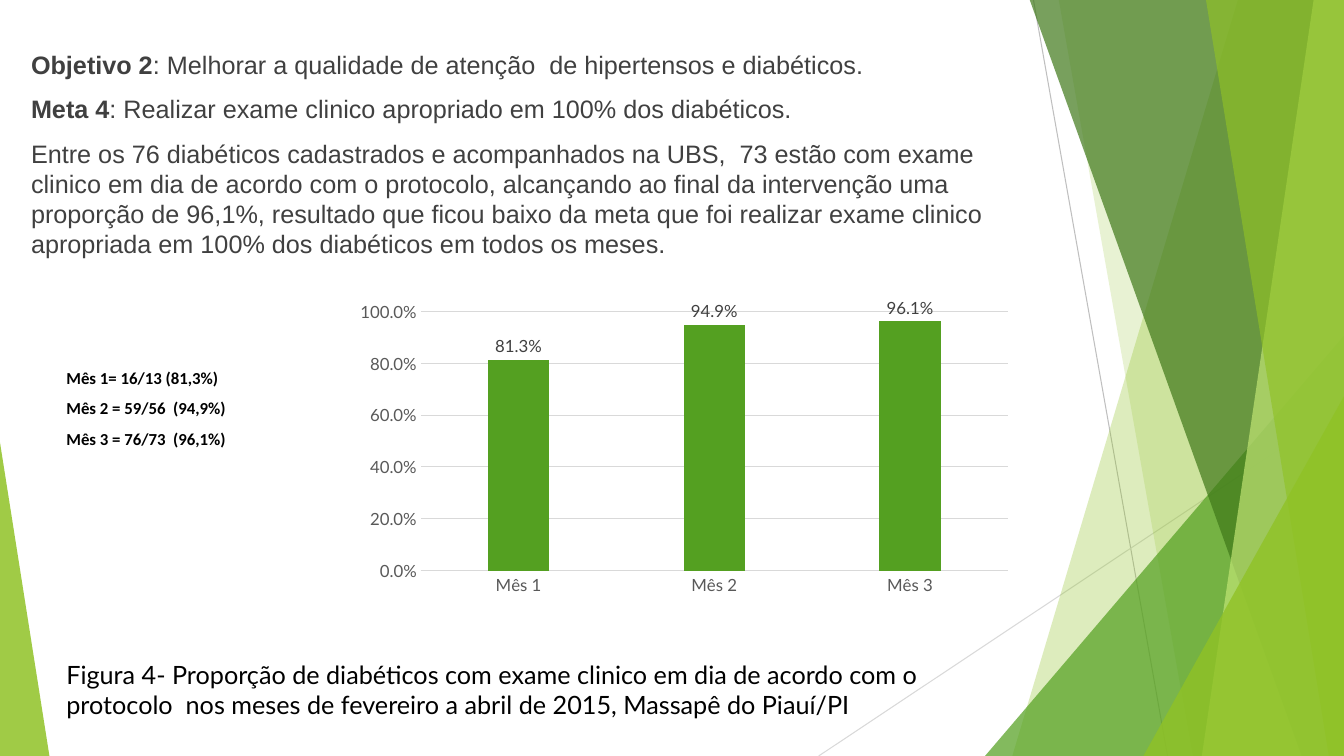
from lxml import etree
from pptx import Presentation
from pptx.chart.data import CategoryChartData
from pptx.dml.color import RGBColor
from pptx.enum.chart import XL_CHART_TYPE, XL_LABEL_POSITION, XL_TICK_MARK
from pptx.enum.shapes import MSO_CONNECTOR, MSO_SHAPE
from pptx.enum.text import MSO_ANCHOR
from pptx.oxml.ns import qn
from pptx.util import Inches, Pt


def paint(color_format, color, opacity=100):
    """Set a solid fill or line colour from a hex string."""
    color_format.solid()
    color_format.fore_color.rgb = RGBColor.from_string(color)
    if opacity < 100:
        hue = color_format._xPr.find(qn("a:solidFill"))[0]
        etree.SubElement(hue, qn("a:alpha")).set("val", str(opacity * 1000))


def add_text(left, top, width, height, paragraphs, *, size, font, color="000000",
             bold=False, before=0, spacing=1.0):
    """Each paragraph is a (bold lead, rest) pair."""
    box = page.shapes.add_textbox(Inches(left), Inches(top), Inches(width), Inches(height))
    frame = box.text_frame
    frame.word_wrap = True
    frame.vertical_anchor = MSO_ANCHOR.TOP
    for index, (lead, rest) in enumerate(paragraphs):
        para = frame.paragraphs[0] if index == 0 else frame.add_paragraph()
        para.space_before = Pt(before)
        para.line_spacing = spacing
        for text, heavy in ((lead, True), (rest, bold)):
            if text:
                span = para.add_run()
                span.text = text
                span.font.size = Pt(size)
                span.font.name = font
                span.font.bold = heavy
                span.font.color.rgb = RGBColor.from_string(color)


deck = Presentation()
deck.slide_width, deck.slide_height = Inches(13.33), Inches(7.5)
page = deck.slides.add_slide(deck.slide_layouts[6])

# Thin crossing lines
for x1, y1, x2, y2, color in ((10.25, 0, 11.58, 7.5, "BFBFBF"),
                              (13.33, 4.03, 8.12, 7.5, "D9D9D9")):
    line = page.shapes.add_connector(MSO_CONNECTOR.STRAIGHT, Inches(x1), Inches(y1),
                                     Inches(x2), Inches(y2))
    paint(line.line.fill, color)
    line.line.width = Pt(0.75)
    etree.SubElement(line._element.spPr, qn("a:effectLst"))

# Translucent facets: bands run to the right edge from a top x to a bottom x;
# triangles have a box and an apex position
facets = (
    ("band", (12.28, 10.04), "90C226", 30),
    ("band", (10.5, 11.83), "90C226", 20),
    ("triangle", (9.77, 3.33, 3.56, 4.17, 1), "54A021", 72),
    ("band", (10.21, 12.91), "3F7819", 70),
    ("band", (13.03, 11.92), "C0E474", 70),
    ("band", (11.96, 13.18), "90C226", 65),
    ("triangle", (11.34, 3.93, 1.99, 3.57, 1), "90C226", 80),
    ("triangle", (0, 4.39, 0.49, 3.11, 0), "90C226", 85),
)
for kind, geometry, color, opacity in facets:
    if kind == "band":
        top_x, bottom_x = geometry
        outline = page.shapes.build_freeform(Inches(top_x), Inches(-0.01))
        outline.add_line_segments([(Inches(x), Inches(y)) for x, y in
                                   ((13.33, -0.01), (13.33, 7.5), (bottom_x, 7.5))])
        facet = outline.convert_to_shape()
    else:
        *place, apex = geometry
        facet = page.shapes.add_shape(MSO_SHAPE.ISOSCELES_TRIANGLE, *map(Inches, place))
        facet.adjustments[0] = apex
    facet.shadow.inherit = False
    facet.line.fill.background()
    paint(facet.fill, color, opacity)

# Objective, goal and result
add_text(0.21, 0.44, 10.16, 6.11, (
    ("Objetivo 2", ": Melhorar a qualidade de atenção  de hipertensos e diabéticos."),
    ("Meta 4", ": Realizar exame clinico apropriado em 100% dos diabéticos."),
    ("", "Entre os 76 diabéticos cadastrados e acompanhados na UBS,  73 estão com exame "
         "clinico em dia de acordo com o protocolo, alcançando ao final da intervenção uma "
         "proporção de 96,1%, resultado que ficou baixo da meta que foi realizar exame clinico "
         "apropriada em 100% dos diabéticos em todos os meses."),
), size=18, font="Arial", color="404040", before=10)

# Column chart
chart_data = CategoryChartData(number_format="0.0%")
chart_data.categories = ["Mês 1", "Mês 2", "Mês 3"]
chart_data.add_series("Series 1", (0.813, 0.949, 0.961))
chart = page.shapes.add_chart(XL_CHART_TYPE.COLUMN_CLUSTERED, Inches(3.44), Inches(2.93),
                              Inches(6.69), Inches(3.03), chart_data).chart
chart.has_legend = False
chart.has_title = False
chart.font.size = Pt(10)
chart.font.name = "Lato"

plot = chart.plots[0]
plot.vary_by_categories = False
plot.gap_width = 219
plot.overlap = -27
paint(plot.series[0].format.fill, "54A021")
plot.has_data_labels = True
labels = plot.data_labels
labels.show_value = True
labels.position = XL_LABEL_POSITION.OUTSIDE_END

months, share = chart.category_axis, chart.value_axis
share.minimum_scale, share.maximum_scale, share.major_unit = 0, 1, 0.2
share.has_major_gridlines = True
share.format.line.fill.background()
for axis in (months, share):
    axis.major_tick_mark = axis.minor_tick_mark = XL_TICK_MARK.NONE
for line in (months.format.line, share.major_gridlines.format.line):
    paint(line.fill, "D9D9D9")
    line.width = Pt(0.75)
for numbers in (share.tick_labels, labels):
    numbers.number_format = "0.0%"
    numbers.number_format_is_linked = False
for item, color in ((months.tick_labels, "595959"), (share.tick_labels, "595959"),
                    (labels, "404040")):
    item.font.size = Pt(12)
    item.font.name = "Lato"
    item.font.color.rgb = RGBColor.from_string(color)

# Figure caption
add_text(0.56, 6.49, 8.78, 1.01, (
    ("", "Figura 4- Proporção de diabéticos com exame clinico em dia de acordo com o "
         "protocolo  nos meses de fevereiro a abril de 2015, Massapê do Piauí/PI"),
), size=18, font="Lato")

# Monthly counts
add_text(0.56, 3.5, 6.67, 1.01, (
    ("", "Mês 1= 16/13 (81,3%)"),
    ("", "Mês 2 = 59/56  (94,9%)"),
    ("", "Mês 3 = 76/73  (96,1%)"),
), size=12, font="Calibri", bold=True, spacing=1.5)

deck.save("out.pptx")
